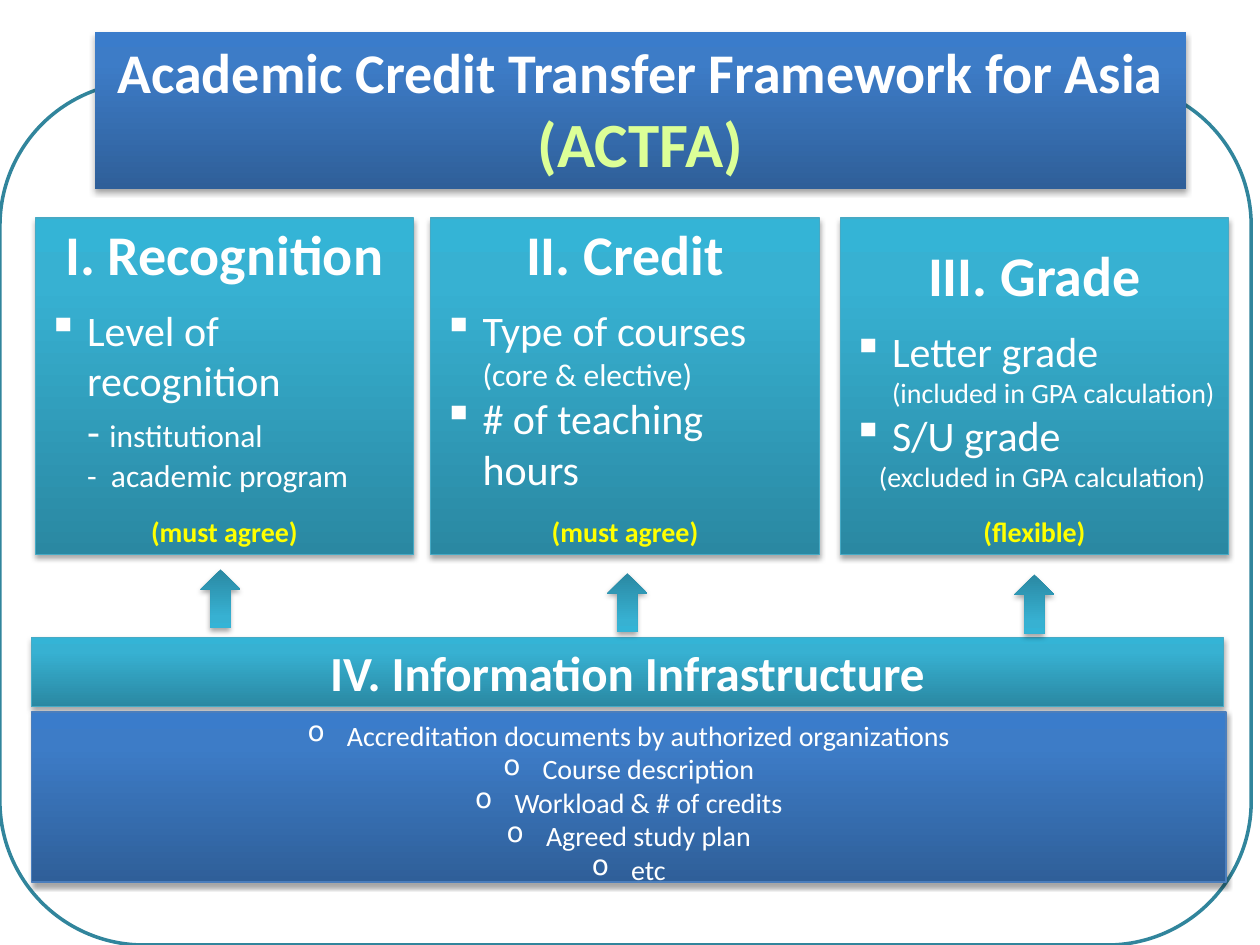
from lxml import etree
from pptx import Presentation
from pptx.dml.color import RGBColor
from pptx.enum.shapes import MSO_SHAPE
from pptx.enum.text import MSO_ANCHOR, MSO_AUTO_SIZE, PP_ALIGN
from pptx.oxml.ns import qn
from pptx.util import Pt

RECT, ROUND, ARROW = MSO_SHAPE.RECTANGLE, MSO_SHAPE.ROUNDED_RECTANGLE, MSO_SHAPE.DOWN_ARROW
TOP, MIDDLE, BOTTOM = MSO_ANCHOR.TOP, MSO_ANCHOR.MIDDLE, MSO_ANCHOR.BOTTOM
CENTER, LEFT = PP_ALIGN.CENTER, PP_ALIGN.LEFT
FONT = "Calibri"
HANG = 22.5

COLORS = {"white": "FFFFFF", "yellow": "FFFF00", "lime": "DCFF97", "frame": "31859C",
          "teal line": "46AAC5", "blue line": "4B7EBC", "shadow": "000000"}
GRADIENTS = {
    "teal": [(0, "2A88A2"), (80, "37B1D2"), (100, "34B4D6")],
    "blue": [(0, "2F5F99"), (80, "3D7CC7"), (100, "3A7CCB")],
}

TITLE = [("Academic Credit Transfer Framework for Asia ", 32, "white"), ("(ACTFA)", 36, "lime")]
PILLARS = [
    {"left": 20.2, "width": 216, "heading": "I. Recognition", "verdict": "(must agree)",
     "points": [("▪", [[("Level of recognition", 24)],
                       [("- ", 24), ("institutional", 18)],
                       [("-  academic program", 18)]])]},
    {"left": 246.2, "width": 222, "heading": "II. Credit", "verdict": "(must agree)",
     "points": [("▪", [[("Type of courses", 24)], [("(core & elective)", 18)]]),
                ("▪", [[("# of teaching hours", 24)]])]},
    {"left": 480.2, "width": 222, "heading": "III. Grade", "verdict": "(flexible)",
     "points": [("▪", [[("Letter grade", 24)], [("(included in GPA calculation)", 16)]]),
                ("▪", [[("S/U grade", 24)]]),
                (None, [[("(excluded in GPA calculation)", 16)]])]},
]
ARROWS = [(114.5, 325.4), (347, 327.6), (579.6, 328.3)]
INFRASTRUCTURE = "IV. Information Infrastructure"
DOCUMENTS = ["Accreditation documents by authorized organizations", "Course description",
             "Workload & # of credits", "Agreed study plan", "etc"]


def rgb(name):
    return RGBColor.from_string(COLORS[name])


def child(parent, tag, **attributes):
    return etree.SubElement(parent, qn(tag), {k: str(v) for k, v in attributes.items()})


def add_panel(page, kind, place, gradient, line=None):
    panel = page.shapes.add_shape(kind, *map(Pt, place))
    panel.fill.gradient()
    properties = panel._element.spPr
    fill = properties.find(qn("a:gradFill"))
    for old in list(fill):
        fill.remove(old)
    stops = child(fill, "a:gsLst")
    for position, color in GRADIENTS[gradient]:
        child(child(stops, "a:gs", pos=position * 1000), "a:srgbClr", val=color)
    child(fill, "a:lin", ang=270 * 60000, scaled=0)
    if line:
        panel.line.color.rgb = rgb(line)
        panel.line.width = Pt(0.75)
    else:
        panel.line.fill.background()
    panel.shadow.inherit = False
    shadow = child(properties.find(qn("a:effectLst")), "a:outerShdw", blurRad=Pt(3.1),
                   dist=Pt(1.8), dir=90 * 60000, rotWithShape=0)
    child(child(shadow, "a:srgbClr", val=COLORS["shadow"]), "a:alpha", val=35000)
    return panel


def add_para(box, lines, align=CENTER, bullet=None, margin=0, bold=False, color="white"):
    frame = box.text_frame
    frame.word_wrap = True
    first = frame.paragraphs[0]
    para = frame.add_paragraph() if first.runs else first
    para.alignment = align
    settings = para._p.get_or_add_pPr()
    settings.set("marL", str(Pt(margin)))
    settings.set("indent", str(Pt(-margin if bullet else 0)))
    if bullet:
        child(settings, "a:buChar", char=bullet)
    for number, line in enumerate(lines):
        if number:
            para.add_line_break()
        for text, size, *tint in line:
            span = para.add_run()
            span.text = text
            span.font.name = FONT
            span.font.size = Pt(size)
            span.font.bold = bold
            span.font.color.rgb = rgb(tint[0] if tint else color)
    return para


def add_pillar(page, pillar):
    box = add_panel(page, RECT, (pillar["left"], 124.6, pillar["width"], 192.2), "teal", "teal line")
    box.text_frame.vertical_anchor = BOTTOM
    heading = add_para(box, [[(pillar["heading"], 32)]], bold=True)
    heading.space_after = Pt(10)
    for bullet, lines in pillar["points"]:
        add_para(box, lines, LEFT, bullet, HANG if bullet else 15)
    verdict = add_para(box, [[(pillar["verdict"], 16)]], bold=True, color="yellow")
    verdict.space_before = Pt(12)


def main():
    deck = Presentation()
    deck.slide_width, deck.slide_height = Pt(720), Pt(540)
    page = deck.slides.add_slide(deck.slide_layouts[6])

    frame = page.shapes.add_shape(ROUND, Pt(0), Pt(46.8), Pt(715), Pt(493.2))
    frame.shadow.inherit = False
    frame.fill.solid()
    frame.fill.fore_color.rgb = rgb("white")
    frame.line.color.rgb = rgb("frame")
    frame.line.width = Pt(2)

    for pillar in PILLARS:
        add_pillar(page, pillar)

    base = add_panel(page, RECT, (18, 364.3, 681.1, 39.6), "teal", "teal line")
    base.text_frame.vertical_anchor = MIDDLE
    add_para(base, [[(INFRASTRUCTURE, 28)]], bold=True)

    documents = add_panel(page, RECT, (18, 406.8, 682.6, 97.2), "blue", "blue line")
    documents.text_frame.vertical_anchor = TOP
    for document in DOCUMENTS:
        add_para(documents, [[(document, 16)]], bullet="o", margin=HANG)

    for left, top in ARROWS:
        arrow = add_panel(page, ARROW, (left, top, 23, 33.8), "teal")
        arrow._element.spPr.find(qn("a:xfrm")).set("flipV", "1")

    title = add_panel(page, RECT, (54, 18, 624, 90), "blue")
    title.text_frame.vertical_anchor = TOP
    title.text_frame.auto_size = MSO_AUTO_SIZE.SHAPE_TO_FIT_TEXT
    add_para(title, [TITLE], bold=True)

    deck.save("out.pptx")


if __name__ == "__main__":
    main()
